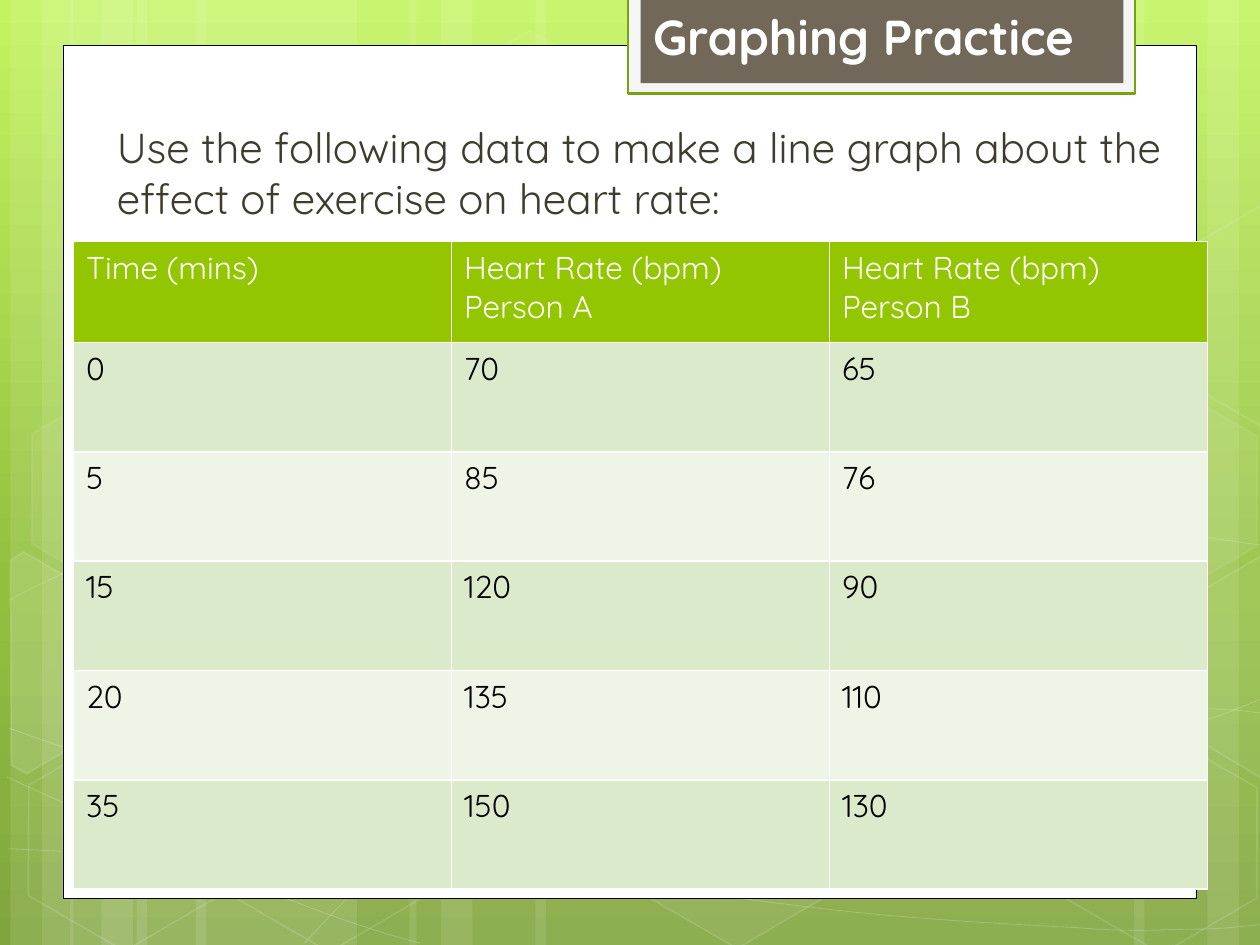
from copy import deepcopy
from math import cos, radians, sin

from lxml import etree
from pptx import Presentation
from pptx.dml.color import RGBColor
from pptx.enum.shapes import MSO_SHAPE
from pptx.enum.text import MSO_ANCHOR, MSO_AUTO_SIZE, PP_ALIGN
from pptx.oxml.ns import qn
from pptx.util import Pt

RECTANGLE, HEXAGON = MSO_SHAPE.RECTANGLE, MSO_SHAPE.HEXAGON
LEFT, TOP, NO_AUTOFIT = PP_ALIGN.LEFT, MSO_ANCHOR.TOP, MSO_AUTO_SIZE.NONE
FONT = "Quicksand"
WHITE = "FFFFFF"
WIDTH, HEIGHT = 720, 540
TILT = 30

BACKGROUND_STOPS = [(0, "C3F35F"), (0.62, "93BF3F"), (1, "81A53E")]

# Left and width of the pale vertical bands
BANDS = [(start + offset, width)
         for start, last_width in [(6, 126), (40, 126), (234, 222)]
         for offset, width in [(0, 36), (18, 60), (72, last_width)]]
BANDS += [(528, 126), (690, 36), (648, 60)]

# Start point, then Bezier segments of two control points and an end point
CURVES = [
    [(5, 485), (44, 487), (83, 489), (137, 488), (191, 487), (258, 486), (330, 479),
     (402, 472), (504, 458), (570, 444), (636, 430), (703, 409), (725, 397)],
    [(5, 343), (26, 332), (47, 321), (87, 310), (128, 300), (186, 284), (250, 279),
     (314, 274), (392, 273), (471, 279), (550, 284), (682, 307), (725, 312)],
    [(4, 444), (91, 484), (178, 523), (240, 539)],
    [(5, 416), (27, 424), (50, 432), (92, 444), (134, 454), (197, 472), (257, 485),
     (317, 497), (392, 510), (452, 517), (512, 525), (576, 528), (614, 530),
     (652, 533), (662, 531), (680, 531), (699, 531), (712, 529), (725, 528)],
    [(174, 539), (187, 525), (200, 510), (217, 498), (235, 485), (259, 470), (279, 460),
     (300, 450), (312, 446), (338, 438), (364, 431), (413, 421), (438, 416),
     (464, 411), (467, 411), (490, 410), (512, 408), (547, 405), (572, 405),
     (597, 404), (638, 405), (638, 405), (654, 405), (670, 405), (686, 405),
     (699, 405), (711, 406), (724, 408)],
]

# Left, top, fill opacity and line opacity in percent
HEXAGONS = [(240, 26, 4, 8), (358, 424, 6, 12), (8, 425.5, 0, 12), (10, 224.5, 7, 8),
            (125, 426, 0, 12), (542, 326, 10, 12), (600.5, 427, 0, 12), (600.5, 226, 7, 8)]

# Hexagons cut by the slide edge: corners, centre of rotation and fill opacity
CUT_RIGHT = [(667, 349), (721, 317.5), (726.5, 321), (726.5, 441), (721, 444), (667, 412.5)]
CUT_HEXAGONS = [
    ([(6, 320.5), (13.5, 315.5), (69, 347), (68.5, 410.5), (14.5, 442), (6, 437)],
     (26, 385), 10),
    (CUT_RIGHT, (709, 374.5), 4),
    ([(x, y - 200.5) for x, y in CUT_RIGHT], (709, 174), 0),
]

TABLE_ROWS = [
    ["Time (mins)", "Heart Rate (bpm)\nPerson A", "Heart Rate (bpm)\nPerson B"],
    ["0", "70", "65"],
    ["5", "85", "76"],
    ["15", "120", "90"],
    ["20", "135", "110"],
    ["35", "150", "130"],
]


def color(hex_string):
    return RGBColor.from_string(hex_string)


def set_opacity(fill_parent, percent):
    if percent < 100:
        rgb = fill_parent.find(qn("a:solidFill")).find(qn("a:srgbClr"))
        etree.SubElement(rgb, qn("a:alpha")).set("val", str(percent * 1000))


def style(shape, fill=None, opacity=100, line=None, line_width=1, line_opacity=100):
    shape.shadow.inherit = False
    if fill and opacity:
        shape.fill.solid()
        shape.fill.fore_color.rgb = color(fill)
        set_opacity(shape.element.spPr, opacity)
    else:
        shape.fill.background()
    if line:
        shape.line.color.rgb = color(line)
        shape.line.width = Pt(line_width)
        set_opacity(shape.element.spPr.find(qn("a:ln")), line_opacity)
    else:
        shape.line.fill.background()


def add_box(slide, kind, box, **look):
    shape = slide.shapes.add_shape(kind, *map(Pt, box))
    style(shape, **look)
    return shape


def add_outline(slide, points, closed, **look):
    builder = slide.shapes.build_freeform(*points[0], scale=Pt(1))
    builder.add_line_segments(points[1:], close=closed)
    shape = builder.convert_to_shape()
    style(shape, **look)
    return shape


def add_curve(slide, points, **look):
    shape = add_outline(slide, points, False, **look)
    # Join each three line segments into one Bezier segment
    segments = list(shape.element.iter(qn("a:lnTo")))
    outline = segments[0].getparent()
    for first in range(0, len(segments), 3):
        bezier = etree.SubElement(outline, qn("a:cubicBezTo"))
        for segment in segments[first:first + 3]:
            bezier.append(segment[0])
            outline.remove(segment)


def turn_back(point, centre):
    x, y = point[0] - centre[0], point[1] - centre[1]
    cosine, sine = cos(radians(TILT)), sin(radians(TILT))
    return centre[0] + x * cosine + y * sine, centre[1] - x * sine + y * cosine


def add_text(frame, text, size, text_color, bold=False):
    for index, line in enumerate(text.split("\n")):
        paragraph = frame.add_paragraph() if index else frame.paragraphs[0]
        paragraph.alignment = LEFT
        run = paragraph.add_run()
        run.text = line
        run.font.name = FONT
        run.font.size = Pt(size)
        run.font.bold = bold
        run.font.color.rgb = color(text_color)


def add_background(slide):
    # Gradient from light to dark green
    fill = slide.background.fill
    fill.gradient()
    fill.gradient_angle = 270
    stop_list = slide.element.find(".//" + qn("a:gsLst"))
    stop_list.append(deepcopy(stop_list[-1]))
    for stop, (position, stop_color) in zip(fill.gradient_stops, BACKGROUND_STOPS):
        stop.position = position
        stop.color.rgb = color(stop_color)
    # Bands, curves and hexagons
    for left, width in BANDS:
        add_box(slide, RECTANGLE, (left, 0, width, HEIGHT), fill=WHITE, opacity=10)
    for curve in CURVES:
        add_curve(slide, curve, line=WHITE, line_width=0.5, line_opacity=20)
    for left, top, opacity, line_opacity in HEXAGONS:
        hexagon = add_box(slide, HEXAGON, (left, top, 126, 109.5), fill=WHITE,
                          opacity=opacity, line=WHITE, line_opacity=line_opacity)
        hexagon.adjustments[0] = 0.285
        hexagon.rotation = TILT
    for corners, centre, opacity in CUT_HEXAGONS:
        upright = [turn_back(corner, centre) for corner in corners]
        add_outline(slide, upright, True, fill=WHITE, opacity=opacity,
                    line=WHITE, line_opacity=12).rotation = TILT


def add_title_tab(slide, box):
    left, top, width, height = box
    add_box(slide, RECTANGLE, box, fill="F5F5F5", line="74A510", line_width=1.25)
    inner_left, inner_width = left + 7, width - 13.5
    add_box(slide, RECTANGLE, (inner_left, top, inner_width, height - 6), fill="71685A")
    title = slide.shapes.title
    title.left, title.top, title.width, title.height = map(
        Pt, (inner_left, 0, inner_width, 41))
    frame = title.text_frame
    frame.word_wrap = True
    frame.auto_size = NO_AUTOFIT
    frame.vertical_anchor = TOP
    add_text(frame, "Graphing Practice", 28, WHITE, bold=True)
    # Bring the title in front of its tab
    title.element.getparent().append(title.element)


def add_instruction(slide, box):
    frame = slide.shapes.add_textbox(*map(Pt, box)).text_frame
    frame.word_wrap = True
    frame.margin_left = Pt(12.75)
    add_text(frame, "Use the following data to make a line graph about the effect of "
             "exercise on heart rate:", 24, "3E3D2D")


def add_borders(cell):
    properties = cell._tc.get_or_add_tcPr()
    for side in "LRTB":
        line = etree.SubElement(properties, qn("a:ln" + side), w=str(Pt(1)))
        solid = etree.SubElement(line, qn("a:solidFill"))
        etree.SubElement(solid, qn("a:srgbClr"), val=WHITE)


def add_heart_rate_table(slide, box, header_height):
    row_count, column_count = len(TABLE_ROWS), len(TABLE_ROWS[0])
    table = slide.shapes.add_table(row_count, column_count, *map(Pt, box)).table
    table.horz_banding = False
    body_height = (box[3] - header_height) / (row_count - 1)
    for index, values in enumerate(TABLE_ROWS):
        header = index == 0
        table.rows[index].height = Pt(header_height if header else body_height)
        fill = "94C600" if header else ("EEF5E7", "DCEACC")[index % 2]
        for cell, value in zip(table.rows[index].cells, values):
            add_borders(cell)
            cell.fill.solid()
            cell.fill.fore_color.rgb = color(fill)
            add_text(cell.text_frame, value, 18, WHITE if header else "000000")


def main():
    presentation = Presentation()
    presentation.slide_width, presentation.slide_height = Pt(WIDTH), Pt(HEIGHT)
    slide = presentation.slides.add_slide(presentation.slide_layouts[5])
    add_background(slide)
    # White content panel
    add_box(slide, RECTANGLE, (36, 26, 648, 487.2), fill=WHITE, line="000000", line_width=0.5)
    add_instruction(slide, (54, 66, 624, 78))
    add_heart_rate_table(slide, (42, 138, 648, 370.25), 57.75)
    add_title_tab(slide, (359, -1.5, 289.5, 55))
    presentation.save("out.pptx")


if __name__ == "__main__":
    main()
